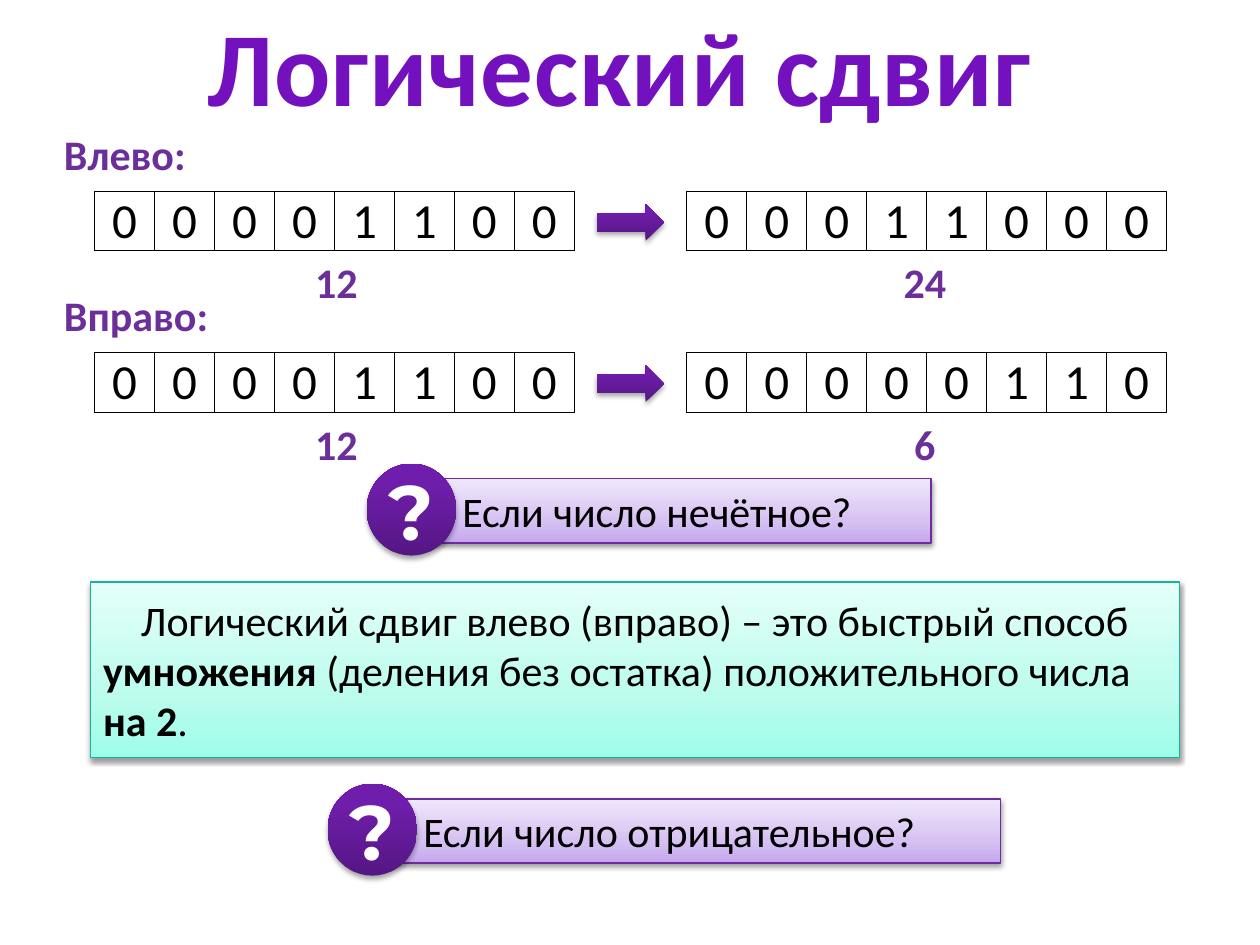
from lxml.etree import SubElement
from pptx import Presentation
from pptx.dml.color import RGBColor
from pptx.enum.shapes import MSO_SHAPE
from pptx.enum.text import MSO_ANCHOR, PP_ALIGN
from pptx.oxml import parse_xml
from pptx.oxml.ns import nsdecls, qn
from pptx.util import Inches, Pt

DARK = [(0, "551784"), (80, "6F1EAB"), (100, "701CAF")]
LILAC = [(0, "C5A6EE"), (35, "D6C2F2"), (100, "EFE7FB")]
MINT = [(0, "9DFDE8"), (35, "BBFCED"), (100, "E4FFF9")]
PURPLE = "6C2F9A"
BLACK = "000000"


def color(text):
    return RGBColor.from_string(text)


def box(left, top, width, height):
    return [Inches(v) for v in (left, top, width, height)]


def write(para, text, tint, size=24, bold=False, name="Calibri"):
    run = para.add_run()
    run.text = text
    look = {"size": Pt(size), "bold": bold, "name": name}
    for key, value in look.items():
        setattr(run.font, key, value)
    run.font.color.rgb = color(tint)
    return run


def label(slide, text, place, align=PP_ALIGN.LEFT):
    frame = slide.shapes.add_textbox(*box(*place)).text_frame
    frame.word_wrap = False
    para = frame.paragraphs[0]
    para.alignment = align
    write(para, text, PURPLE, bold=True)


def solid(shapes, kind, place, stops, edge=None):
    """Shape with an upward gradient and a soft shadow below it."""
    shape = shapes.add_shape(kind, *box(*place))
    props = shape.element.spPr
    marks = "".join(f'<a:gs pos="{pos * 1000}"><a:srgbClr val="{tint}"/></a:gs>'
                    for pos, tint in stops)
    props.append(parse_xml(
        f'<a:gradFill {nsdecls("a")} rotWithShape="1"><a:gsLst>{marks}</a:gsLst>'
        '<a:lin ang="16200000" scaled="0"/></a:gradFill>'))
    if edge:
        shape.line.color.rgb = color(edge)
        shape.line.width = Pt(0.75)
    else:
        shape.line.fill.background()
    alpha, dist = (38, 1.6) if edge else (35, 1.8)
    props.append(parse_xml(
        f'<a:effectLst {nsdecls("a")}><a:outerShdw blurRad="{Pt(3.1)}" '
        f'dist="{Pt(dist)}" dir="5400000" rotWithShape="0"><a:srgbClr val="{BLACK}">'
        f'<a:alpha val="{alpha * 1000}"/></a:srgbClr></a:outerShdw></a:effectLst>'))
    shape.text_frame.vertical_anchor = MSO_ANCHOR.MIDDLE
    shape.text_frame.paragraphs[0].alignment = PP_ALIGN.LEFT
    return shape


def border(cell):
    props = cell._tc.get_or_add_tcPr()
    for side in ("a:lnL", "a:lnR", "a:lnT", "a:lnB"):
        line = SubElement(props, qn(side), w=str(Pt(0.5)))
        fill = SubElement(line, qn("a:solidFill"))
        SubElement(fill, qn("a:srgbClr"), val=BLACK)


def bits(slide, digits, left, top):
    """One-row table with a bit in each cell."""
    place = box(left, top, 3.81, 0.47)
    table = slide.shapes.add_table(1, len(digits), *place).table
    table.first_row = table.horz_banding = False
    for col, digit in enumerate(digits):
        table.columns[col].width = Inches(3.81 / len(digits))
        cell = table.cell(0, col)
        border(cell)
        cell.fill.background()
        gaps = {"margin_left": 0.08, "margin_right": 0.08,
                "margin_top": 0, "margin_bottom": 0}
        for key, value in gaps.items():
            setattr(cell, key, Inches(value))
        para = cell.text_frame.paragraphs[0]
        para.alignment = PP_ALIGN.CENTER
        write(para, digit, BLACK, 28)


def shift(slide, name, top, pairs):
    """Caption, source bits, arrow and result bits."""
    label(slide, name, (0.41, top - 0.55, 1.36, 0.5))
    for (digits, value), left, mid in zip(pairs, (0.75, 5.45), (2.67, 7.34)):
        bits(slide, digits, left, top)
        label(slide, value, (mid - 0.27, top + 0.47, 0.54, 0.5), PP_ALIGN.CENTER)
    solid(slide.shapes, MSO_SHAPE.RIGHT_ARROW, (4.74, top + 0.1, 0.53, 0.29), DARK)


def query(slide, text, left, top, width):
    """Question bar with a round badge at its left end."""
    group = slide.shapes.add_group_shape().shapes
    bar = solid(group, MSO_SHAPE.RECTANGLE, (left, top, width, 0.51), LILAC, "6E2C9F")
    bar.text_frame.margin_left = Inches(0.25)
    write(bar.text_frame.paragraphs[0], text, BLACK)
    badge = solid(group, MSO_SHAPE.OVAL, (left - 0.51, top - 0.12, 0.71, 0.73), DARK)
    badge.text_frame.word_wrap = False
    para = badge.text_frame.paragraphs[0]
    para.alignment = PP_ALIGN.CENTER
    write(para, "?", "FFFFFF", 44, True, "Montserrat")


def rule(slide):
    """Panel with the conclusion."""
    panel = solid(slide.shapes, MSO_SHAPE.RECTANGLE, (0.72, 4.62, 8.64, 1.39),
                  MINT, "16B39E")
    para = panel.text_frame.paragraphs[0]
    para._p.get_or_add_pPr().set("indent", str(Inches(0.3)))
    parts = ["Логический сдвиг влево (вправо) – это быстрый способ ", "умножения",
             " (деления без остатка) положительного числа ", "на 2", "."]
    for num, part in enumerate(parts):
        write(para, part, BLACK, bold=num % 2 == 1)


def head(slide, text):
    title = slide.shapes.title
    title.left, title.top, title.width, title.height = box(0, 0.16, 9.84, 0.7)
    title.text_frame.vertical_anchor = MSO_ANCHOR.MIDDLE
    para = title.text_frame.paragraphs[0]
    para.alignment = PP_ALIGN.CENTER
    run = write(para, text, "7411BF", 60, True)
    run._r.get_or_add_rPr().set("spc", "50")


def main():
    deck = Presentation()
    deck.slide_width, deck.slide_height = Inches(10), Inches(7.5)
    slide = deck.slides.add_slide(deck.slide_layouts[5])
    head(slide, "Логический сдвиг")

    # Shifts in both directions
    start = ("00001100", "12")
    shift(slide, "Влево:", 1.52, [start, ("00011000", "24")])
    shift(slide, "Вправо:", 2.8, [start, ("00000110", "6")])

    # Conclusion and questions
    query(slide, "Если число нечётное?", 3.42, 3.8, 3.97)
    rule(slide)
    query(slide, "Если число отрицательное?", 3.11, 6.34, 4.83)
    deck.save("out.pptx")


if __name__ == "__main__":
    main()
